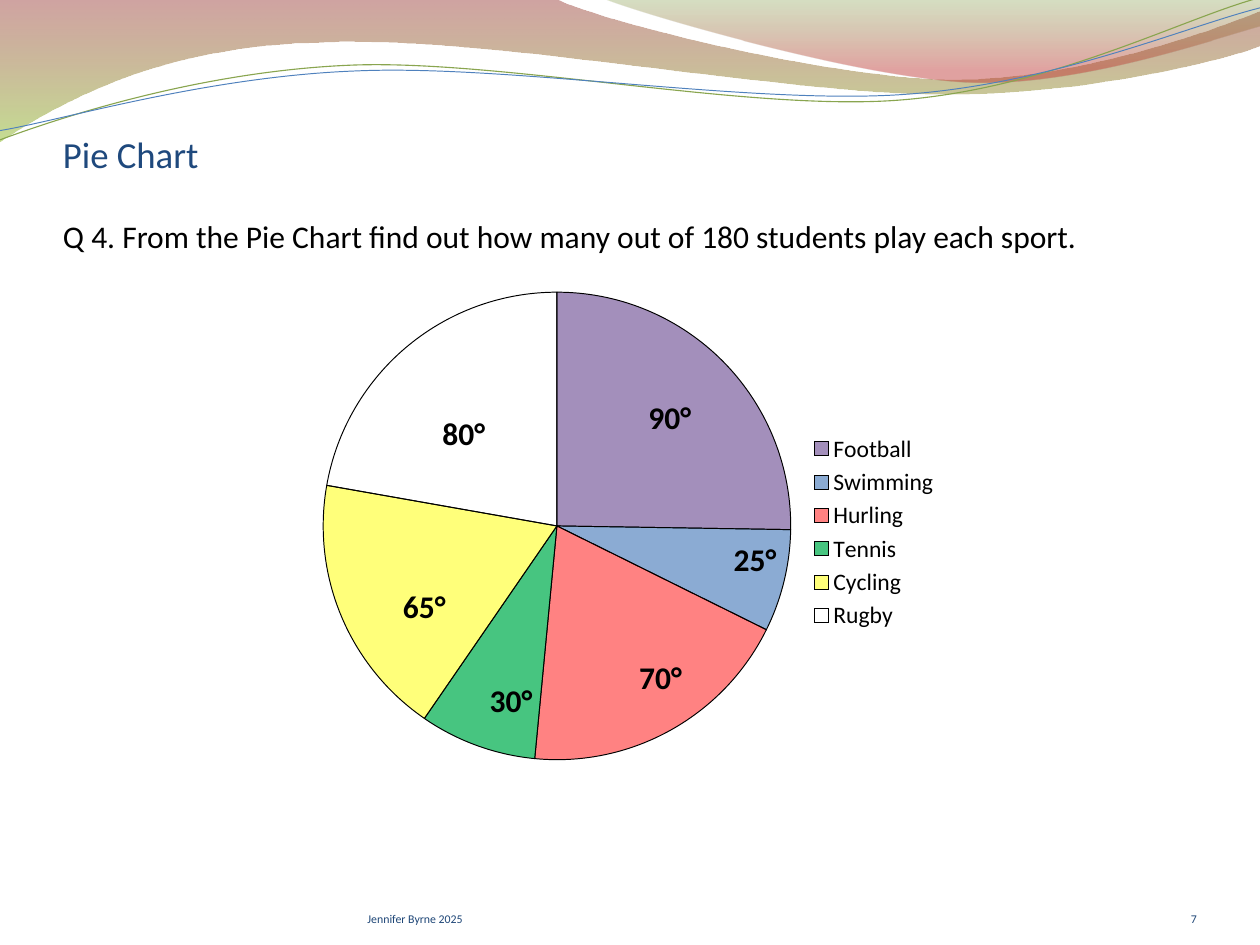
from dataclasses import dataclass

from lxml.etree import SubElement
from pptx import Presentation
from pptx.chart.data import CategoryChartData
from pptx.dml.color import RGBColor
from pptx.enum.chart import XL_CHART_TYPE, XL_LEGEND_POSITION
from pptx.enum.text import MSO_ANCHOR, MSO_AUTO_SIZE, PP_ALIGN
from pptx.oxml import parse_xml
from pptx.oxml.ns import nsdecls, qn
from pptx.util import Pt


@dataclass(frozen=True)
class Theme:
    """Colours and type sizes of the slide."""
    font: str = "Calibri"
    ink: str = "000000"
    heading: str = "1F497D"
    footer: str = "1E4677"
    heading_size: int = 28
    body_size: int = 24
    legend_size: int = 18
    footer_size: int = 9
    green_line: str = "89A54F"
    blue_line: str = "4F81BD"
    band: tuple = ((0, "973330", 45), (1, "95C238", 55))
    crest: tuple = ((0, "769537", 30), (0.8, "BE3330", 45))


THEME = Theme()

SPORTS = [
    ("Football", 90, "8064A2", 72, (487, 300)),
    ("Swimming", 25, "4F81BD", 66, (552, 408)),
    ("Hurling", 70, "FF0000", 49, (480, 497.5)),
    ("Tennis", 30, "00B050", 72, (366, 515.5)),
    ("Cycling", 65, "FFFF00", 52, (300, 443.5)),
    ("Rugby", 80, None, None, (330, 312)),
]

BAND = [(0, -1), (423, -1), (456, 16, 637, 60.5, 728, 60.5),
        (819, 60.5, 920, 24.5, 960, 8.6), (961, 34.6),
        (944, 42, 835, 72.7, 716, 72), (597, 72, 366, 26.6, 247, 32.4),
        (123, 33.8, 44, 79, -1, 108.7), (0, -1)]
CREST = [(460, -1), (489, 11, 654, 59, 738, 62.6),
         (821, 66, 923, 30, 960, 20), (960, 0), (460, -1)]
GREEN_WAVE = [(-2, 84), (45, 69, 152, 39.3, 266, 39.7),
              (380, 40, 567, 89.2, 683, 86), (799, 82.8, 902, 34.3, 960, 21.4)]
BLUE_WAVE = [(-1.5, 76.8), (44, 71.7, 157, 43, 272, 44.2),
             (387, 44.6, 572, 84.3, 687, 81.8), (803, 79.3, 905, 40, 962, 28.6)]


def set_attrs(obj, **values):
    """Set each named attribute on an object."""
    for name, value in values.items():
        setattr(obj, name, value)


def set_alpha(clr, percent):
    """Give a colour element an opacity."""
    SubElement(clr, qn("a:alpha")).set("val", str(percent * 1000))


def style_font(font, size, color, bold=False):
    """Apply the theme font with a size and colour."""
    set_attrs(font, name=THEME.font, size=Pt(size), bold=bold)
    font.color.rgb = RGBColor.from_string(color)


def add_outline(shapes, segments, close):
    """Add a freeform whose six-number segments are cubic curves."""
    points = [(Pt(x), Pt(y)) for seg in segments for x, y in zip(seg[::2], seg[1::2])]
    builder = shapes.build_freeform(*points[0], scale=1.0)
    builder.add_line_segments(points[1:], close=close)
    sp = builder.convert_to_shape()
    sp.shadow.inherit = False
    steps = iter(sp._element.xpath(".//a:path/a:lnTo"))
    for seg in segments[1:]:
        first = next(steps)
        if len(seg) == 6:
            first.tag = qn("a:cubicBezTo")
            for _ in range(2):
                step = next(steps)
                first.append(step[0])
                step.getparent().remove(step)
    return sp


def add_gradient_wave(shapes, segments, stops):
    """Add a closed wave with a translucent vertical gradient."""
    sp = add_outline(shapes, segments, True)
    sp.line.fill.background()
    sp.fill.gradient()
    sp.fill.gradient_angle = 270
    for stop, (position, color, _) in zip(sp.fill.gradient_stops, stops):
        stop.position = position
        stop.color.rgb = RGBColor.from_string(color)
    for clr, (_, _, alpha) in zip(sp._element.xpath(".//a:gs/a:srgbClr"), stops):
        set_alpha(clr, alpha)


def add_line_wave(shapes, segments, color, width):
    """Add an open, slightly tilted wavy line."""
    sp = add_outline(shapes, segments, False)
    sp.rotation = -2.7
    sp.fill.background()
    sp.line.width = Pt(width)
    sp.line.color.rgb = RGBColor.from_string(color)


def write(sp, text, size, color, bold=False, align=PP_ALIGN.LEFT, **frame):
    """Write one formatted paragraph into a shape."""
    tf = sp.text_frame
    set_attrs(tf, **frame)
    p = tf.paragraphs[0]
    p.alignment = align
    r = p.add_run()
    r.text = text
    style_font(r.font, size, color, bold)


def bottom_frame(inset_top):
    """Return the format of a bottom-anchored frame without side insets."""
    return dict(word_wrap=True, auto_size=MSO_AUTO_SIZE.NONE,
                vertical_anchor=MSO_ANCHOR.BOTTOM, margin_left=0,
                margin_right=0, margin_bottom=0, margin_top=Pt(inset_top))


def add_text(s, box, text, size, color, **style):
    """Add a text box at a box given in points."""
    sp = s.shapes.add_textbox(*map(Pt, box))
    write(sp, text, size, color, **style)


def add_question(s, box, text):
    """Place the title placeholder above the waves and fill it."""
    sp = s.shapes.title
    s.shapes._spTree.append(sp._element)
    set_attrs(sp, **dict(zip(("left", "top", "width", "height"), map(Pt, box))))
    write(sp, text, THEME.body_size, THEME.ink, **bottom_frame(3.6))


def set_plot_layout(chart, **edges):
    """Fix the inner plot area as fractions of the chart."""
    area = chart._chartSpace.chart.plotArea
    for old in area.findall(qn("c:layout")):
        area.remove(old)
    parts = "".join(f'<c:{k}Mode val="edge"/>' for k in "xy")
    parts += "".join(f'<c:{k} val="{v}"/>' for k, v in edges.items())
    area.insert(0, parse_xml(
        f'<c:layout {nsdecls("c")}><c:manualLayout><c:layoutTarget val="inner"/>'
        f'{parts}</c:manualLayout></c:layout>'))


def add_sports_pie(s, box):
    """Add the pie of sports, in whole percents, with its legend."""
    data = CategoryChartData()
    data.categories = [sport[0] for sport in SPORTS]
    data.add_series("Series 1", [round(sport[1] / 3.6) for sport in SPORTS])
    chart = s.shapes.add_chart(XL_CHART_TYPE.PIE, *map(Pt, box), data).chart
    set_attrs(chart, has_title=False, has_legend=True)
    set_attrs(chart.legend, position=XL_LEGEND_POSITION.RIGHT, include_in_layout=False)
    style_font(chart.font, THEME.legend_size, THEME.ink)
    set_plot_layout(chart, x=0.019, y=0.115, w=0.733, h=0.75)
    plot = chart.plots[0]
    plot.vary_by_categories = True
    series = plot.series[0]
    for i, (_, _, color, _, _) in enumerate(SPORTS):
        fmt = series.points[i].format
        fmt.line.width = Pt(0.75)
        fmt.line.color.rgb = RGBColor.from_string(THEME.ink)
        if color:
            fmt.fill.solid()
            fmt.fill.fore_color.rgb = RGBColor.from_string(color)
        else:
            fmt.fill.background()
    fills = series._element.xpath("c:dPt/c:spPr/a:solidFill/a:srgbClr")
    for clr, sport in zip(fills, SPORTS):
        set_alpha(clr, sport[3])


def main():
    """Build the slide and save it."""
    prs = Presentation()
    set_attrs(prs, slide_width=Pt(960), slide_height=Pt(720))
    s = prs.slides.add_slide(prs.slide_layouts[5])
    add_gradient_wave(s.shapes, BAND, THEME.band)
    add_gradient_wave(s.shapes, CREST, THEME.crest)
    lines = s.shapes.add_group_shape().shapes
    add_line_wave(lines, GREEN_WAVE, THEME.green_line, 0.85)
    add_line_wave(lines, BLUE_WAVE, THEME.blue_line, 0.75)
    add_question(s, (48, 74, 864, 120), "Q 4. From the Pie Chart find out how many "
                 "out of 180 students play each sport.")
    add_sports_pie(s, (237, 168, 486, 475))
    for _, angle, _, _, corner in SPORTS:
        add_text(s, (*corner, 47.5, 36), f"{angle}°", THEME.body_size, THEME.ink,
                 bold=True, word_wrap=False, auto_size=MSO_AUTO_SIZE.SHAPE_TO_FIT_TEXT)
    add_text(s, (280, 667.5, 352, 38), "Jennifer Byrne 2025", THEME.footer_size,
             THEME.footer, **bottom_frame(0))
    add_text(s, (48, 75.5, 864, 58.5), "Pie Chart", THEME.heading_size,
             THEME.heading, **bottom_frame(3.6))
    add_text(s, (832, 667.5, 80, 38), "7", THEME.footer_size, THEME.footer,
             align=PP_ALIGN.RIGHT, **bottom_frame(0))
    prs.save("out.pptx")


if __name__ == "__main__":
    main()
